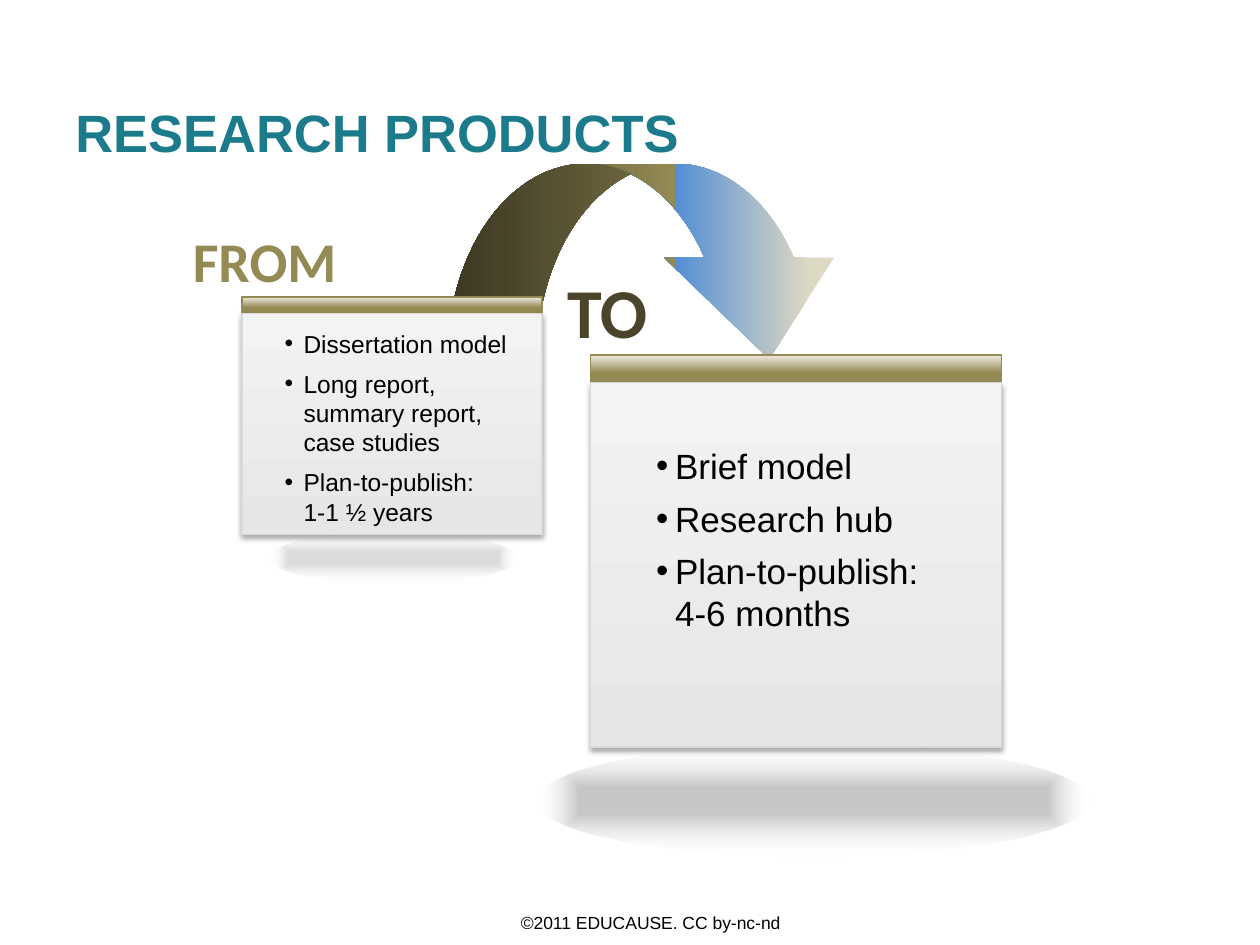
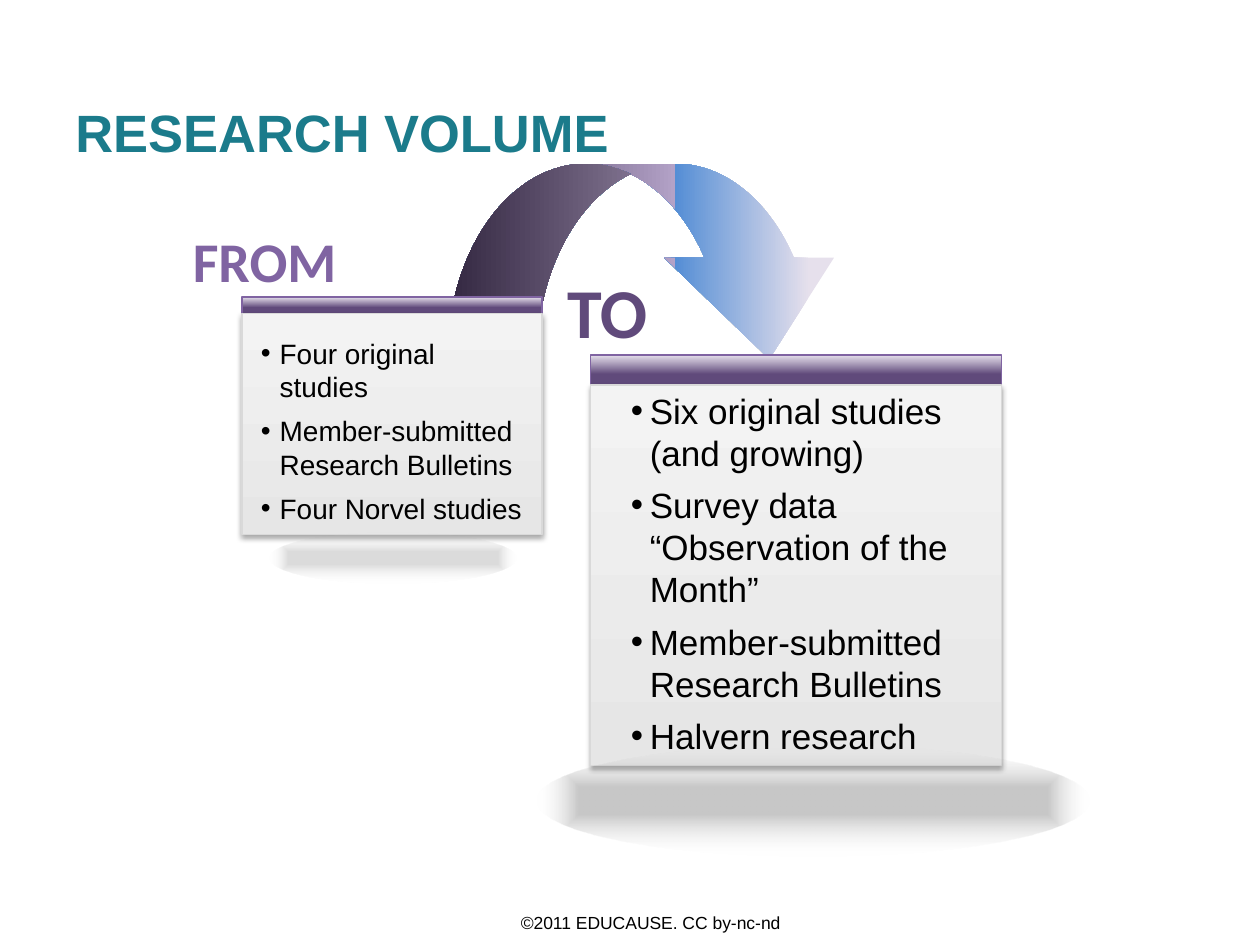
import collections
import dataclasses

import pptx
import pptx.dml.color
import pptx.enum.shapes
import pptx.enum.text
import pptx.oxml
import pptx.oxml.ns
import pptx.util

Cm = pptx.util.Cm
Pt = pptx.util.Pt
SHAPE = pptx.enum.shapes.MSO_SHAPE
ALIGN = pptx.enum.text.PP_ALIGN
ANCHOR = pptx.enum.text.MSO_ANCHOR

Box = collections.namedtuple("Box", "x y w h")
Palette = collections.namedtuple(
    "Palette", "from_label to_label bar_base bar_shine arrow_head arrow_bend arrow_tail")
Card = collections.namedtuple("Card", "box bar text size items")


@dataclasses.dataclass(frozen=True)
class Theme:
    body_font: str = "Arial"
    label_font: str = "Calibri"
    title: str = "1B7B8B"
    ink: str = "000000"
    paper: str = "FFFFFF"
    card_low: str = "E6E6E6"
    card_high: str = "F3F3F3"
    card_edge: str = "D9D9D9"
    arrow_blue: str = "558ED5"
    title_size: int = 30
    from_size: int = 32
    to_size: int = 40
    footer_size: int = 10
    gap: int = 6
    edge: float = 0.75


THEME = Theme()
OLIVE = Palette("948A54", "4A452A", "948A54", "EEECE1", "DDD9C3", "948A54", "4A452A")
PURPLE = Palette("8064A2", "604A7B", "604A7B", "E6E0EC", "E6E0EC", "B3A2C7", "403152")

SLIDE = Box(0, 0, 25.4, 19.05)
TITLE = Box(1.27, 1.07, 23.29, 3.18)
FOOTER = Box(9.09, 18.08, 8.05, 1.02)
FROM = Box(3.61, 4.45, 3.45, 1.63)
TO = Box(11.15, 5.28, 2.18, 1.96)
ARROW = Box(9.02, 3.3, 8.2, 3.94)
LEFT_CARD = Box(4.88, 5.99, 6.05, 4.78)
RIGHT_CARD = Box(11.91, 7.16, 8.28, 7.9)
LEFT_GLOW = Box(5.44, 10.74, 4.98, 1.02)
RIGHT_GLOW = Box(10.82, 15.01, 11.15, 2.26)


def place(box):
    return [Cm(v) for v in box]


def xml(tag, body):
    return pptx.oxml.parse_xml(f"<a:{tag} {pptx.oxml.ns.nsdecls('a')} {body}")


def add_run(p, text, size, font, color, bold=False):
    r = p.add_run()
    r.text = text
    r.font.size = Pt(size)
    r.font.name = font
    r.font.bold = bold
    r.font.color.rgb = pptx.dml.color.RGBColor.from_string(color)


def add_frame(s, box, anchor=ANCHOR.TOP, wrap=True):
    tf = s.shapes.add_textbox(*place(box)).text_frame
    tf.word_wrap = wrap
    tf.vertical_anchor = anchor
    return tf


def add_line_text(s, box, text, size, font, color, bold=True, align=ALIGN.CENTER,
                  anchor=ANCHOR.TOP, wrap=False):
    p = add_frame(s, box, anchor, wrap).paragraphs[0]
    p.alignment = align
    add_run(p, text, size, font, color, bold)


def set_gradient(sp, stops, angle=None):
    sp.fill.background()
    stop_xml = "".join(
        f'<a:gs pos="{pos * 1000}"><a:srgbClr val="{color}">'
        f'<a:alpha val="{alpha * 1000}"/></a:srgbClr></a:gs>'
        for pos, color, alpha in stops)
    if angle is None:
        direction = ('<a:path path="shape"><a:fillToRect l="50000" t="50000" '
                     'r="50000" b="50000"/></a:path>')
    else:
        direction = f'<a:lin ang="{angle * 60000}" scaled="0"/>'
    fill = xml("gradFill", f'rotWithShape="1"><a:gsLst>{stop_xml}</a:gsLst>{direction}</a:gradFill>')
    spPr = sp._element.spPr
    spPr.replace(spPr.find(pptx.oxml.ns.qn("a:noFill")), fill)


def add_filled(shapes, kind, box, stops, angle=None, edge=None):
    sp = shapes.add_shape(kind, *place(box))
    sp.shadow.inherit = False
    set_gradient(sp, stops, angle)
    if edge:
        sp.line.color.rgb = pptx.dml.color.RGBColor.from_string(edge)
        sp.line.width = Pt(THEME.edge)
    else:
        sp.line.fill.background()
    return sp


def add_drop_shadow(sp):
    effects = sp._element.spPr.find(pptx.oxml.ns.qn("a:effectLst"))
    effects.append(xml(
        "outerShdw",
        f'blurRad="{Pt(3.1)}" dist="{Pt(1.8)}" dir="5400000" rotWithShape="0">'
        f'<a:srgbClr val="{THEME.ink}"><a:alpha val="35000"/></a:srgbClr></a:outerShdw>'))


def add_panel(s, box, bar, palette):
    shapes = s.shapes.add_group_shape().shapes
    add_filled(shapes, SHAPE.RECTANGLE, box._replace(h=bar),
               [(44, palette.bar_base, 100), (100, palette.bar_shine, 100)],
               270, palette.from_label)
    drop = 0.87 * bar
    body = add_filled(shapes, SHAPE.RECTANGLE, box._replace(y=box.y + drop, h=box.h - drop),
                      [(0, THEME.card_low, 100), (100, THEME.card_high, 100)],
                      270, THEME.card_edge)
    add_drop_shadow(body)


def add_bullets(s, card):
    dx, dy, w, h = card.text
    tf = add_frame(s, Box(card.box.x + dx, card.box.y + dy, w, h))
    for i, item in enumerate(card.items):
        p = tf.add_paragraph() if i else tf.paragraphs[0]
        p.space_after = Pt(THEME.gap)
        pPr = p._p.get_or_add_pPr()
        pPr.set("marL", str(Cm(0.38)))
        pPr.set("indent", str(-Cm(0.38)))
        pPr.append(xml("buFont", f'typeface="{THEME.body_font}"/>'))
        pPr.append(xml("buChar", 'char="•"/>'))
        for j, line in enumerate(item.split("\n")):
            if j:
                p.add_line_break()
            add_run(p, line, card.size, THEME.body_font, THEME.ink)


def add_arrow(s, box, palette):
    stops = [(11, palette.arrow_head, 100), (44, THEME.arrow_blue, 100),
             (44, palette.arrow_bend, 100), (100, palette.arrow_tail, 100)]
    sp = add_filled(s.shapes, SHAPE.CURVED_DOWN_ARROW, box, stops, 180)
    for i, value in enumerate((0.457, 0.869, 0.519)):
        sp.adjustments[i] = value


def add_glow(s, box, alpha):
    add_filled(s.shapes, SHAPE.OVAL, box, [(24, THEME.ink, alpha), (100, THEME.paper, 0)])


def add_shift_slide(prs, title, palette, cards):
    s = prs.slides.add_slide(prs.slide_layouts[6])
    add_line_text(s, FOOTER, "©2011 EDUCAUSE. CC by-nc-nd", THEME.footer_size,
                  THEME.body_font, THEME.ink, bold=False, anchor=ANCHOR.MIDDLE, wrap=True)
    add_line_text(s, TITLE, title, THEME.title_size, THEME.body_font, THEME.title,
                  align=ALIGN.LEFT, anchor=ANCHOR.MIDDLE, wrap=True)
    add_line_text(s, TO, "TO", THEME.to_size, THEME.label_font, palette.to_label)
    add_line_text(s, FROM, "FROM", THEME.from_size, THEME.label_font, palette.from_label)
    add_arrow(s, ARROW, palette)
    for card in cards:
        add_panel(s, card.box, card.bar, palette)
    for card in cards:
        add_bullets(s, card)
    add_glow(s, RIGHT_GLOW, 22)
    add_glow(s, LEFT_GLOW, 14)


def main():
    prs = pptx.Presentation()
    prs.slide_width, prs.slide_height = Cm(SLIDE.w), Cm(SLIDE.h)
    add_shift_slide(prs, "RESEARCH PRODUCTS", OLIVE, [
        Card(LEFT_CARD, 0.38, Box(0.61, 0.51, 5.33, 4.27), 14,
             ["Dissertation model", "Long report, summary report, case studies",
              "Plan-to-publish:\n1-1 ½ years"]),
        Card(RIGHT_CARD, 0.64, Box(1.07, 1.68, 6.5, 4.11), 20,
             ["Brief model", "Research hub", "Plan-to-publish:\n4-6 months"]),
    ])
    add_shift_slide(prs, "RESEARCH VOLUME", PURPLE, [
        Card(LEFT_CARD, 0.38, Box(0.13, 0.66, 5.92, 4.11), 16,
             ["Four original studies", "Member-submitted Research Bulletins",
              "Four Norvel studies"]),
        Card(RIGHT_CARD._replace(h=8.28), 0.69, Box(0.56, 0.56, 7.44, 7.75), 20,
             ["Six original studies (and growing)", "Survey data “Observation of the Month”",
              "Member-submitted Research Bulletins", "Halvern research"]),
    ])
    prs.save("out.pptx")


if __name__ == "__main__":
    main()
